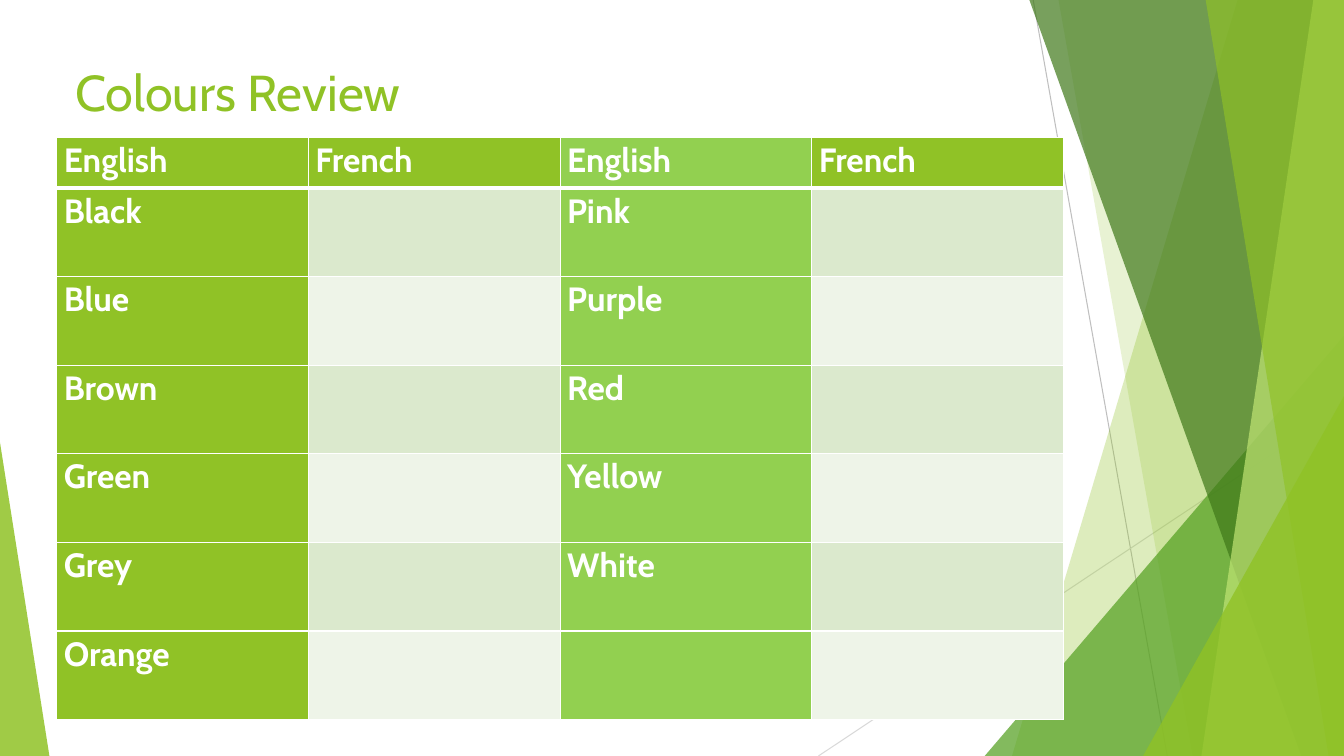
from dataclasses import dataclass

from lxml import etree
from pptx import Presentation
from pptx.dml.color import RGBColor
from pptx.enum.shapes import MSO_CONNECTOR, MSO_SHAPE
from pptx.oxml.ns import qn
from pptx.util import Pt

LINE = MSO_CONNECTOR.STRAIGHT
WEDGE = MSO_SHAPE.ISOSCELES_TRIANGLE


@dataclass(frozen=True)
class Theme:
    font: str = "Cabin"
    title: int = 36
    body: int = 24
    white: str = "FFFFFF"
    lime: str = "90C226"
    leaf: str = "92D050"
    grass: str = "54A021"
    moss: str = "3F7819"
    pale: str = "C0E474"
    odd: str = "DBE9CD"
    even: str = "EEF4E8"
    gray: str = "BFBFBF"
    mist: str = "D9D9D9"


@dataclass(frozen=True)
class Ray:
    start: tuple[float, float]
    end: tuple[float, float]
    color: str


@dataclass(frozen=True)
class Band:
    top: float
    foot: float
    color: str
    alpha: int


@dataclass(frozen=True)
class Peak:
    left: float
    top: float
    width: float
    tip: float
    color: str
    alpha: int


THEME = Theme()
WIDE, HIGH = 960, 540
EDGE = -0.6

RAYS = [
    Ray((738, 0), (833.8, HIGH), THEME.gray),
    Ray((WIDE, 290.2), (584.6, HIGH), THEME.mist),
]
SHARDS = [
    Band(884.2, 722.9, THEME.lime, 30),
    Band(756, 851.8, THEME.lime, 20),
    Peak(703.4, 239.8, 256.6, 1, THEME.grass, 72),
    Band(735.1, 929.5, THEME.moss, 70),
    Band(938.2, 858.2, THEME.pale, 70),
    Band(861.1, 949, THEME.lime, 65),
    Peak(816.5, 283, 143.5, 1, THEME.lime, 80),
    Peak(0, 316.1, 35.3, 0, THEME.lime, 85),
]
ROWS = [
    ("English", "French", "English", "French"),
    ("Black", "", "Pink", ""),
    ("Blue", "", "Purple", ""),
    ("Brown", "", "Red", ""),
    ("Green", "", "Yellow", ""),
    ("Grey", "", "White", ""),
    ("Orange", "", "", ""),
]
COL, HEAD, ROW = 179.8, 36, 63.3


def paint(shape, color: str, alpha: int) -> None:
    shape.shadow.inherit = False
    shape.line.fill.background()
    shape.fill.solid()
    shape.fill.fore_color.rgb = RGBColor.from_string(color)
    tint = shape.fill._xPr.find(qn("a:solidFill"))[0]
    etree.SubElement(tint, qn("a:alpha"), val=str(alpha * 1000))


def draw_ray(shapes, ray: Ray) -> None:
    line = shapes.add_connector(LINE, *map(Pt, ray.start + ray.end))
    line.line.width = Pt(0.75)
    line.line.color.rgb = RGBColor.from_string(ray.color)
    etree.SubElement(line._element.spPr, qn("a:effectLst"))


def draw_band(shapes, band: Band) -> None:
    path = shapes.build_freeform(Pt(band.top), Pt(EDGE))
    path.add_line_segments(
        [
            (Pt(WIDE), Pt(EDGE)),
            (Pt(WIDE), Pt(HIGH)),
            (Pt(band.foot), Pt(HIGH)),
        ]
    )
    paint(path.convert_to_shape(), band.color, band.alpha)


def draw_peak(shapes, peak: Peak) -> None:
    box = (peak.left, peak.top, peak.width, HIGH - peak.top)
    shape = shapes.add_shape(WEDGE, *map(Pt, box))
    shape.adjustments[0] = peak.tip
    paint(shape, peak.color, peak.alpha)


def set_font(part, size: int, color: str, bold: bool = False) -> None:
    part.font.name = THEME.font
    part.font.size = Pt(size)
    part.font.bold = bold
    part.font.color.rgb = RGBColor.from_string(color)


def draw_title(shapes) -> None:
    box = shapes.add_textbox(Pt(46.8), Pt(40.3), Pt(676.8), Pt(103.7))
    box.text_frame.word_wrap = True
    line = box.text_frame.paragraphs[0]
    line.text = "Colours Review"
    set_font(line, THEME.title, THEME.lime)


def add_rules(cell, top: float, foot: float) -> None:
    props = cell._tc.get_or_add_tcPr()
    for side, width in (("L", 1), ("R", 1), ("T", top), ("B", foot)):
        rule = etree.SubElement(props, qn(f"a:ln{side}"), w=str(Pt(width)))
        fill = etree.SubElement(rule, qn("a:solidFill"))
        etree.SubElement(fill, qn("a:srgbClr"), val=THEME.white)


def pick_fill(row: int, col: int) -> str:
    if col == 2:
        return THEME.leaf
    if row == 0 or col == 0:
        return THEME.lime
    return THEME.odd if row % 2 else THEME.even


def fill_cell(cell, text: str, row: int, col: int) -> None:
    cell.margin_left = cell.margin_right = Pt(5)
    cell.margin_top = cell.margin_bottom = 0
    add_rules(cell, 3 if row == 1 else 1, 3 if row == 0 else 1)
    cell.fill.solid()
    cell.fill.fore_color.rgb = RGBColor.from_string(pick_fill(row, col))
    if text:
        line = cell.text_frame.paragraphs[0]
        line.text = text
        line.line_spacing = 1.07
        set_font(line, THEME.body, THEME.white, True)


def draw_table(shapes) -> None:
    cols = len(ROWS[0])
    tall = HEAD + ROW * (len(ROWS) - 1)
    box = (40.6, 98.2, COL * cols, tall)
    table = shapes.add_table(len(ROWS), cols, *map(Pt, box)).table
    table.first_row = table.horz_banding = False
    for col in table.columns:
        col.width = Pt(COL)
    for r, words in enumerate(ROWS):
        table.rows[r].height = Pt(ROW if r else HEAD)
        for c, text in enumerate(words):
            fill_cell(table.cell(r, c), text, r, c)


def main() -> None:
    deck = Presentation()
    deck.slide_width, deck.slide_height = Pt(WIDE), Pt(HIGH)
    shapes = deck.slides.add_slide(deck.slide_layouts[6]).shapes
    for ray in RAYS:
        draw_ray(shapes, ray)
    for shard in SHARDS:
        if isinstance(shard, Band):
            draw_band(shapes, shard)
        else:
            draw_peak(shapes, shard)
    draw_title(shapes)
    draw_table(shapes)
    deck.save("out.pptx")


if __name__ == "__main__":
    main()
